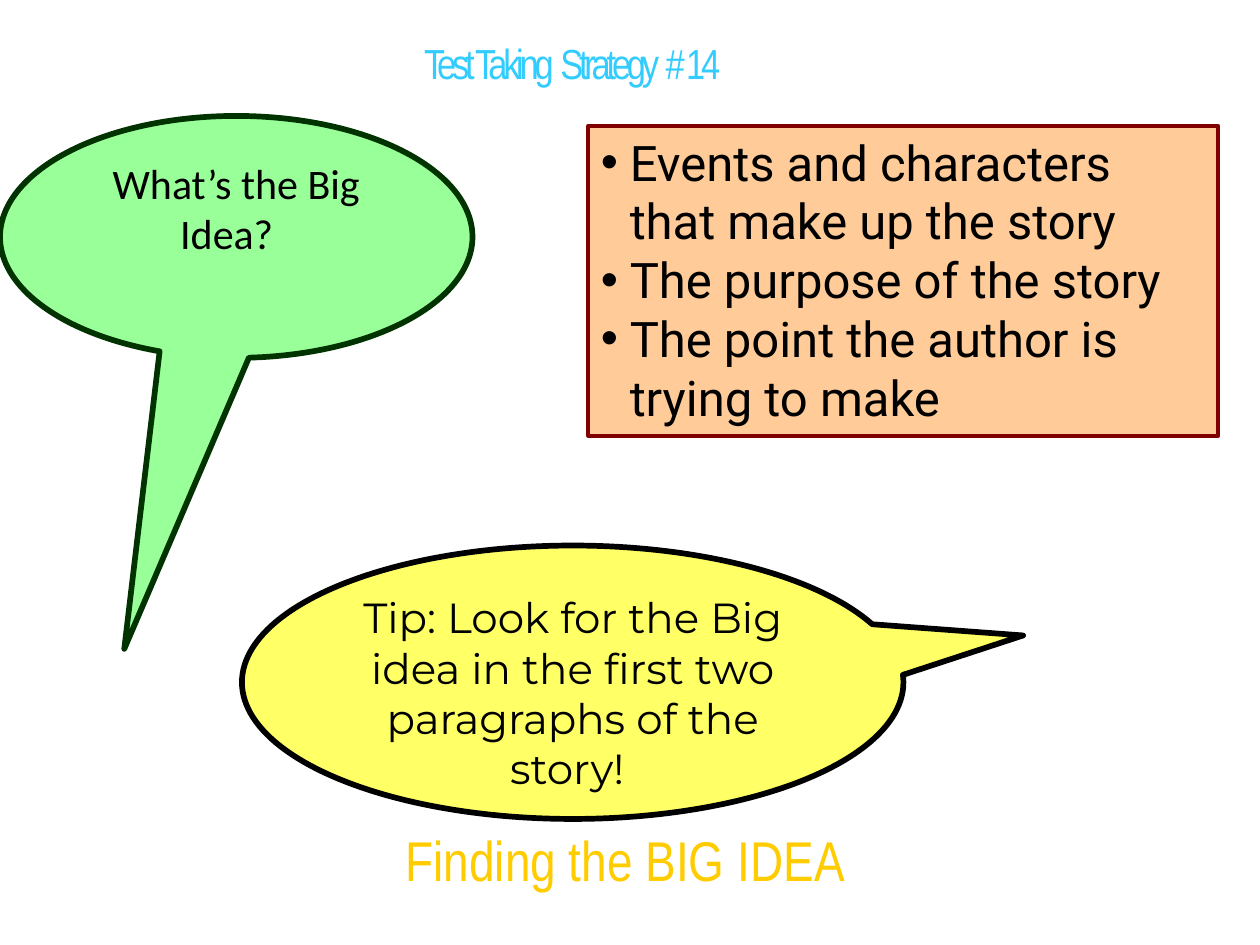
from dataclasses import dataclass

from lxml.etree import SubElement
from pptx import Presentation
from pptx.dml.color import RGBColor
from pptx.enum.shapes import MSO_SHAPE
from pptx.enum.text import MSO_ANCHOR, MSO_AUTO_SIZE, PP_ALIGN
from pptx.oxml import parse_xml
from pptx.oxml.ns import nsdecls, qn
from pptx.util import Inches, Pt

COLOURS = {
    "sky": "33CCFF", "navy": "000099", "gold": "FFCC00", "orange": "FF9933",
    "mint": "99FF99", "forest": "003300", "peach": "FFCC99", "maroon": "800000",
    "yellow": "FFFF66", "black": "000000",
}


@dataclass(frozen=True)
class Panel:
    shape: MSO_SHAPE
    place: tuple[float, float, float, float]
    fill: str
    line: str
    line_width: float
    paragraphs: tuple[str, ...]
    font: str
    size: float
    tail: tuple[float, ...] = ()
    bulleted: bool = False


PANELS = (
    Panel(MSO_SHAPE.OVAL_CALLOUT, (0, 0.92, 3.75, 1.92), "mint", "forest", 3.25,
          ("What’s the Big Idea?  ",), "Calibri", 24, tail=(-0.237, 1.703)),
    Panel(MSO_SHAPE.RECTANGLE, (4.67, 1, 5, 2.46), "peach", "maroon", 2.25,
          ("Events and characters that make up the story",
           "The purpose of the story",
           "The point the author is trying to make"),
          "Roboto", 28, bulleted=True),
    Panel(MSO_SHAPE.OVAL_CALLOUT, (1.92, 4.33, 5.25, 2.17), "yellow", "black", 3.25,
          ("Tip: Look for the Big idea in the first two paragraphs of the story! ",),
          "Montserrat", 24, tail=(0.681, -0.171)),
)


def rgb(name: str) -> RGBColor:
    return RGBColor.from_string(COLOURS[name])


def place_box(box, place: tuple[float, float, float, float]) -> None:
    box.left, box.top, box.width, box.height = map(Inches, place)


def write_text(para, text: str, *, font: str, size: float, colour: str = "",
               align=PP_ALIGN.CENTER):
    para.alignment = align
    span = para.add_run()
    span.text = text
    span.font.name = font
    span.font.size = Pt(size)
    span.font.bold = False
    if colour:
        span.font.color.rgb = rgb(colour)
    return span


def set_frame(box, *, wrap: bool, auto_size=MSO_AUTO_SIZE.NONE):
    frame = box.text_frame
    frame.word_wrap = wrap
    frame.auto_size = auto_size
    frame.vertical_anchor = MSO_ANCHOR.TOP
    frame.margin_left = frame.margin_right = Inches(0.1)
    frame.margin_top = frame.margin_bottom = Inches(0.05)
    return frame


def add_bullet(para) -> None:
    properties = para._p.get_or_add_pPr()
    properties.set("marL", str(Inches(0.23)))
    properties.set("indent", str(-Inches(0.23)))
    SubElement(properties, qn("a:buFont")).set("typeface", "Arial")
    SubElement(properties, qn("a:buChar")).set("char", "•")


def add_panel(page, panel: Panel) -> None:
    box = page.shapes.add_shape(panel.shape, *map(Inches, panel.place))
    box.shadow.inherit = False
    box.fill.solid()
    box.fill.fore_color.rgb = rgb(panel.fill)
    box.line.color.rgb = rgb(panel.line)
    box.line.width = Pt(panel.line_width)
    for index, value in enumerate(panel.tail):
        box.adjustments[index] = value
    fit = MSO_AUTO_SIZE.SHAPE_TO_FIT_TEXT if panel.bulleted else MSO_AUTO_SIZE.NONE
    frame = set_frame(box, wrap=True, auto_size=fit)
    align = PP_ALIGN.LEFT if panel.bulleted else PP_ALIGN.CENTER
    for index, text in enumerate(panel.paragraphs):
        para = frame.add_paragraph() if index else frame.paragraphs[0]
        write_text(para, text, font=panel.font, size=panel.size,
                   colour="black", align=align)
        if panel.bulleted:
            add_bullet(para)


def add_title(page) -> None:
    title = page.shapes.title
    place_box(title, (1.5, 0.25, 6.08, 0.75))
    para = set_frame(title, wrap=False).paragraphs[0]
    span = write_text(para, "Test Taking  Strategy  # 14", font="Arial Narrow",
                      size=24, colour="sky")
    properties = span._r.get_or_add_rPr()
    properties.set("spc", "-240")
    properties.insert(0, parse_xml(
        f'<a:ln {nsdecls("a")} w="{Pt(1)}"><a:solidFill>'
        f'<a:srgbClr val="{COLOURS["navy"]}"/></a:solidFill></a:ln>'))


def add_topic(page) -> None:
    box = page.shapes.add_textbox(*map(Inches, (1.17, 6.5, 7.67, 0.8)))
    para = set_frame(box, wrap=False).paragraphs[0]
    span = write_text(para, "Finding the BIG IDEA ", font="Arial Narrow", size=32)
    span._r.get_or_add_rPr().insert(0, parse_xml(
        f'<a:gradFill {nsdecls("a")}><a:gsLst>'
        f'<a:gs pos="0"><a:srgbClr val="{COLOURS["gold"]}"/></a:gs>'
        f'<a:gs pos="100000"><a:srgbClr val="{COLOURS["orange"]}"/></a:gs>'
        '</a:gsLst><a:path path="rect">'
        '<a:fillToRect l="50000" t="50000" r="50000" b="50000"/>'
        '</a:path></a:gradFill>'))


def main() -> None:
    deck = Presentation()
    deck.slide_width, deck.slide_height = Inches(10), Inches(7.5)
    page = deck.slides.add_slide(deck.slide_layouts.get_by_name("Title Only"))
    add_title(page)
    add_topic(page)
    for panel in PANELS:
        add_panel(page, panel)
    deck.save("out.pptx")


if __name__ == "__main__":
    main()
